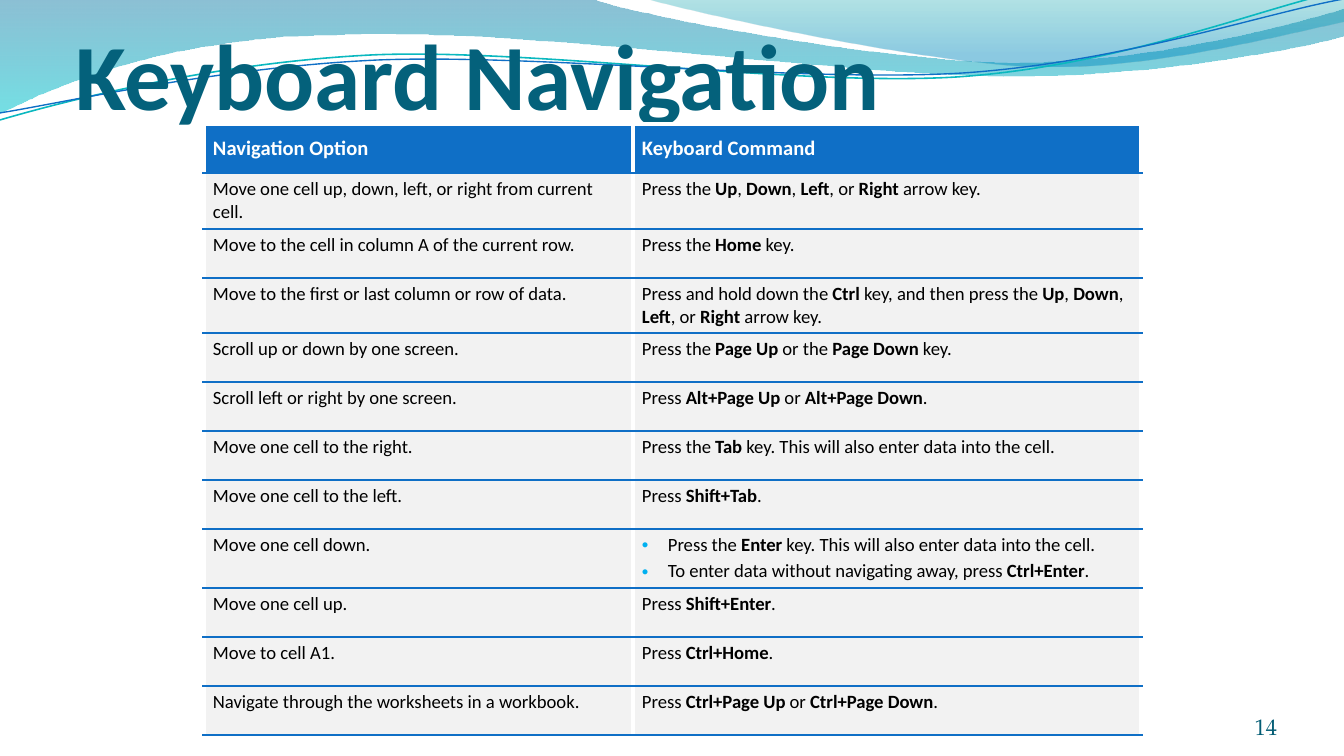
from lxml import etree
from pptx import Presentation
from pptx.dml.color import RGBColor
from pptx.enum.text import MSO_ANCHOR, PP_ALIGN
from pptx.oxml.ns import qn
from pptx.util import Emu, Pt

MIDDLE, BOTTOM, TOP = MSO_ANCHOR.MIDDLE, MSO_ANCHOR.BOTTOM, MSO_ANCHOR.TOP
LEFT, RIGHT = PP_ALIGN.LEFT, PP_ALIGN.RIGHT

SCALE = 914400 / 134.4

WHITE = RGBColor(0xFF, 0xFF, 0xFF)
BLACK = RGBColor(0x00, 0x00, 0x00)
BLUE = RGBColor(0x0F, 0x6F, 0xC6)
TEAL = RGBColor(0x0A, 0xB8, 0xBF)
PALE_GREY = RGBColor(0xF2, 0xF2, 0xF2)
BULLET_BLUE = RGBColor(0x00, 0xB0, 0xF0)
TITLE_COLOR = RGBColor(0x04, 0x61, 0x7B)
NUMBER_COLOR = RGBColor(0x04, 0x5D, 0x75)

# Each step is one point (straight) or three points (Bezier curve).
# Gradient stops are position, colour, opacity in percent.
BANDS = [
    ([[(0, 0)], [(591, -1)],
      [(640, 17), (892, 63), (1019, 63)], [(1146, 63), (1288, 26), (1344, 9)],
      [(1345, 36)],
      [(1321, 44), (1169, 77), (1003, 77)], [(836, 75), (513, 28), (345, 35)],
      [(173, 36), (62, 83), (-1, 114)]],
     [(0, RGBColor(0x00, 0x74, 0xA1), 45), (1, RGBColor(0x00, 0xC6, 0xCF), 55)]),
    ([[(644, -1)],
      [(684, 11), (917, 62), (1034, 66)], [(1150, 70), (1292, 32), (1344, 22)],
      [(1344, 0)]],
     [(0, RGBColor(0x00, 0xA1, 0xA9), 30), (0.8, RGBColor(0x00, 0x8B, 0xBF), 45)]),
]
STRANDS = [
    ([[(0, 120)], [(65, 101), (212, 63), (372, 55)],
      [(532, 48), (796, 87), (957, 77)], [(1120, 66), (1262, 8), (1341, -9)]],
     TEAL, 0.85),
    ([[(0, 113)], [(63, 103), (220, 67), (380, 60)],
      [(542, 54), (802, 83), (964, 73)], [(1124, 62), (1265, 13), (1344, -1)]],
     BLUE, 0.75),
]

HEADINGS = ("Navigation Option", "Keyboard Command")
# Key names between asterisks are bold; a list of commands is bulleted.
COMMANDS = [
    ("Move one cell up, down, left, or right from current cell.",
     "Press the *Up*, *Down*, *Left*, or *Right* arrow key."),
    ("Move to the cell in column A of the current row.", "Press the *Home* key."),
    ("Move to the first or last column or row of data.",
     "Press and hold down the *Ctrl* key, and then press the *Up*, *Down*, "
     "*Left*, or *Right* arrow key."),
    ("Scroll up or down by one screen.",
     "Press the *Page Up *or the *Page Down *key."),
    ("Scroll left or right by one screen.",
     "Press *Alt+Page Up *or *Alt+Page Down*."),
    ("Move one cell to the right.",
     "Press the *Tab* key. This will also enter data into the cell."),
    ("Move one cell to the left.", "Press *Shift+Tab*."),
    ("Move one cell down.",
     ["Press the *Enter* key. This will also enter data into the cell.",
      "To enter data without navigating away, press *Ctrl+Enter*."]),
    ("Move one cell up.", "Press *Shift+Enter*."),
    ("Move to cell A1.", "Press *Ctrl+Home*."),
    ("Navigate through the worksheets in a workbook.",
     "Press *Ctrl+Page Up *or *Ctrl+Page Down*."),
]
COLUMN_WIDTHS = (429, 508)
ROW_HEIGHT = 49
TALL_ROWS = {1: 56, 3: 55, 8: 59}


def px(length):
    return Emu(round(length * SCALE))


def set_font(font, name, size, color, bold=False):
    font.name, font.size, font.bold = name, Pt(size), bold
    font.color.rgb = color


def add_outline(page, left, top, steps, close):
    """Join the end points of the steps, then bend the curved ones."""
    steps = [[(px(left + x), px(top + y)) for x, y in step] for step in steps]
    ends = [step[-1] for step in steps]
    builder = page.shapes.build_freeform(*ends[0])
    builder.add_line_segments(ends[1:], close=close)
    shape = builder.convert_to_shape()
    shape.shadow.inherit = False
    segments = list(shape.element.spPr.iter(qn("a:lnTo")))
    for segment, step in zip(segments, steps[1:]):
        if len(step) == 3:
            curve = etree.Element(qn("a:cubicBezTo"))
            for x, y in step:
                etree.SubElement(curve, qn("a:pt"), x=str(x - shape.left), y=str(y - shape.top))
            segment.getparent().replace(segment, curve)
    return shape


def add_waves(page, left, top):
    for steps, stops in BANDS:
        band = add_outline(page, left, top, steps, True)
        band.line.fill.background()
        band.fill.gradient()
        band.fill.gradient_angle = 270
        for stop, (position, color, _) in zip(band.fill.gradient_stops, stops):
            stop.position = position
            stop.color.rgb = color
        for color, (_, _, opacity) in zip(band.element.spPr.iter(qn("a:srgbClr")), stops):
            etree.SubElement(color, qn("a:alpha"), val=str(opacity * 1000))
    for steps, color, width in STRANDS:
        strand = add_outline(page, left, top, steps, False)
        strand.fill.background()
        strand.line.color.rgb = color
        strand.line.width = Pt(width)


def add_label(page, box, text, anchor, align, inset, font):
    label = page.shapes.add_textbox(*map(px, box))
    frame = label.text_frame
    frame.word_wrap = True
    frame.vertical_anchor = anchor
    frame.margin_left = frame.margin_right = px(inset)
    frame.margin_top = frame.margin_bottom = px(inset // 2)
    para = frame.paragraphs[0]
    para.text, para.alignment = text, align
    set_font(para.font, *font)


def set_borders(cell, top_color, top_width):
    properties = cell._tc.get_or_add_tcPr()
    borders = (("a:lnL", WHITE, 2.25), ("a:lnR", WHITE, 2.25),
               ("a:lnT", top_color, top_width), ("a:lnB", BLUE, 1.5))
    for place, (tag, color, width) in enumerate(borders):
        line = etree.Element(qn(tag), w=str(Pt(width)))
        fill = etree.SubElement(line, qn("a:solidFill"))
        etree.SubElement(fill, qn("a:srgbClr"), val=str(color))
        properties.insert(place, line)


def add_bullet(para):
    properties = para._p.get_or_add_pPr()
    properties.set("marL", str(px(26)))
    properties.set("indent", str(-px(26)))
    color = etree.SubElement(properties, qn("a:buClr"))
    etree.SubElement(color, qn("a:srgbClr"), val=str(BULLET_BLUE))
    etree.SubElement(properties, qn("a:buFont"), typeface="Arial")
    etree.SubElement(properties, qn("a:buChar"), char="•")


def fill_cell(cell, content, is_heading):
    cell.fill.solid()
    cell.fill.fore_color.rgb = BLUE if is_heading else PALE_GREY
    set_borders(cell, *((WHITE, 2.25) if is_heading else (BLUE, 1.5)))
    cell.margin_left = cell.margin_right = px(9)
    cell.margin_top = cell.margin_bottom = px(5)
    cell.vertical_anchor = MIDDLE if is_heading else TOP
    bulleted = isinstance(content, list)
    for i, text in enumerate(content if bulleted else [content]):
        para = cell.text_frame.add_paragraph() if i else cell.text_frame.paragraphs[0]
        para.space_before = Pt(2)
        if bulleted:
            add_bullet(para)
        for j, part in enumerate(text.split("*")):
            span = para.add_run()
            span.text = part
            set_font(span.font, "Calibri", 11 if is_heading else 10,
                     WHITE if is_heading else BLACK, is_heading or j % 2 == 1)


def add_command_table(page, left, top):
    rows = [HEADINGS, *COMMANDS]
    heights = [TALL_ROWS.get(i, ROW_HEIGHT) for i in range(len(rows))]
    table = page.shapes.add_table(len(rows), len(COLUMN_WIDTHS), px(left), px(top),
                                  px(sum(COLUMN_WIDTHS)), px(sum(heights))).table
    for column, width in zip(table.columns, COLUMN_WIDTHS):
        column.width = px(width)
    for i, (contents, height) in enumerate(zip(rows, heights)):
        table.rows[i].height = px(height)
        for j, content in enumerate(contents):
            fill_cell(table.cell(i, j), content, i == 0)


def main():
    deck = Presentation()
    deck.slide_width, deck.slide_height = px(1344), px(756)
    page = deck.slides.add_slide(deck.slide_layouts[6])
    add_waves(page, 0, 0)
    add_label(page, (1165, 700, 112, 40), "14", BOTTOM, RIGHT, 0,
              ("TeX Gyre Pagella", 12, NUMBER_COLOR))
    add_label(page, (62, 27, 1158, 93), "Keyboard Navigation", MIDDLE, LEFT, 13,
              ("Calibri", 50, TITLE_COLOR, True))
    add_command_table(page, 204, 124)
    deck.save("out.pptx")


if __name__ == "__main__":
    main()
